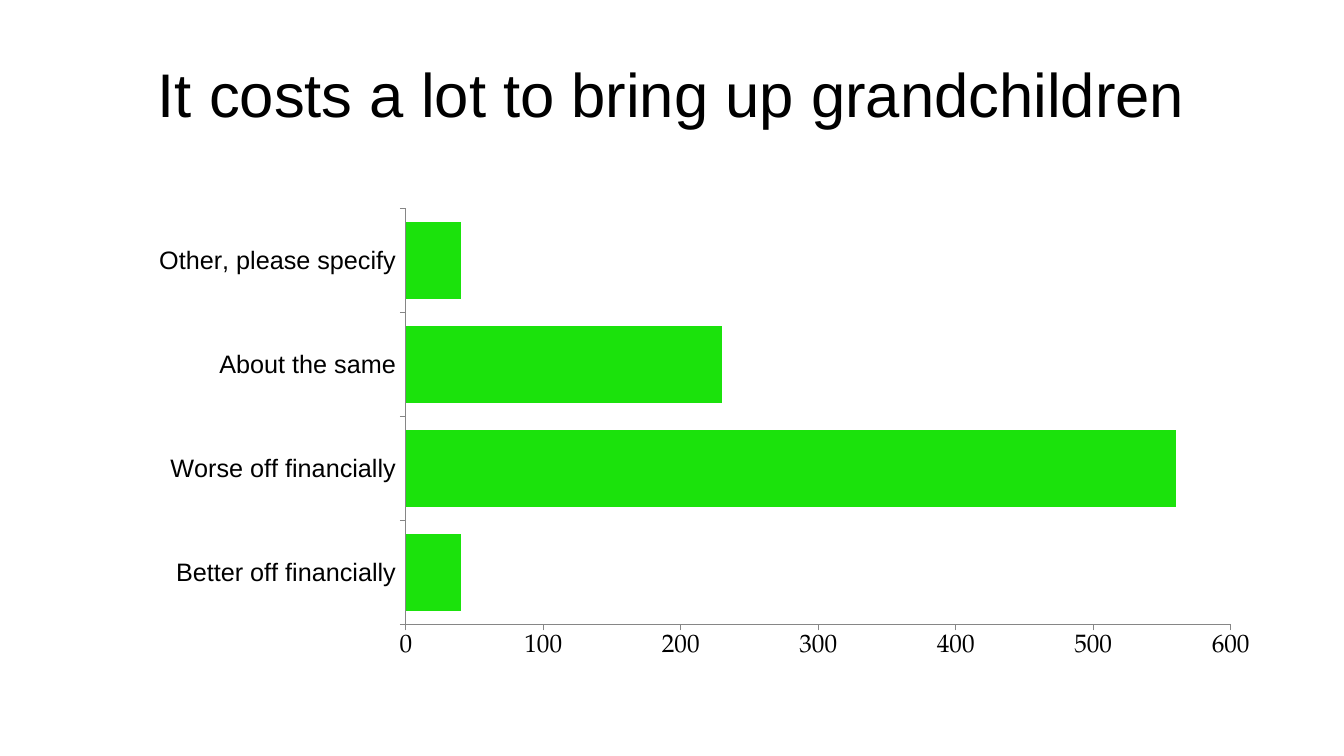
from lxml import etree
from pptx import Presentation
from pptx.chart.data import CategoryChartData
from pptx.dml.color import RGBColor
from pptx.enum.chart import XL_CHART_TYPE, XL_TICK_MARK
from pptx.enum.text import MSO_ANCHOR, PP_ALIGN
from pptx.util import Pt

BAR_CLUSTERED = XL_CHART_TYPE.BAR_CLUSTERED
TICK_OUTSIDE = XL_TICK_MARK.OUTSIDE
MIDDLE = MSO_ANCHOR.MIDDLE
CENTER = PP_ALIGN.CENTER

COLORS = {"text": "000000", "bar": "1BE20C", "axis": "868686"}
HEADING_FONT = "Arial"
NUMBER_FONT = "TeX Gyre Pagella"

FINANCES = {
    "Better off financially": 40,
    "Worse off financially": 560,
    "About the same": 230,
    "Other, please specify": 40,
}
PLOT_LAYOUT = {
    "layoutTarget": "inner", "xMode": "edge", "yMode": "edge",
    "x": 0.28, "y": 0.065, "w": 0.682, "h": 0.833,
}


def apply(target, settings):
    for attribute, value in settings.items():
        setattr(target, attribute, value)


class SlideBuilder:
    def __init__(self, slide):
        self.slide = slide

    def style_font(self, font, name, size):
        apply(font, {"name": name, "size": Pt(size), "bold": False})
        font.color.rgb = RGBColor.from_string(COLORS["text"])

    def title(self, text, left, top, width, height):
        box = self.slide.shapes.add_textbox(Pt(left), Pt(top), Pt(width), Pt(height))
        frame = box.text_frame
        apply(frame, {"word_wrap": True, "vertical_anchor": MIDDLE})
        heading = frame.paragraphs[0]
        apply(heading, {"text": text, "alignment": CENTER})
        self.style_font(heading.runs[0].font, HEADING_FONT, 44)

    def bar_chart(self, answers, left, top, width, height):
        data = CategoryChartData()
        data.categories = list(answers)
        data.add_series("Series 1", list(answers.values()))
        chart = self.slide.shapes.add_chart(
            BAR_CLUSTERED, Pt(left), Pt(top), Pt(width), Pt(height), data
        ).chart
        apply(chart, {"has_legend": False, "has_title": False})
        self.style_font(chart.font, NUMBER_FONT, 18)

        plot = chart.plots[0]
        apply(plot, {"gap_width": 35, "vary_by_categories": False})
        fill = plot.series[0].format.fill
        fill.solid()
        fill.fore_color.rgb = RGBColor.from_string(COLORS["bar"])

        self.style_axis(chart.category_axis, HEADING_FONT)
        self.style_axis(chart.value_axis, NUMBER_FONT)
        apply(chart.value_axis,
              {"minimum_scale": 0, "maximum_scale": 600, "major_unit": 100})
        self.place_plot(chart)

    def style_axis(self, axis, font_name):
        apply(axis, {"has_major_gridlines": False, "major_tick_mark": TICK_OUTSIDE})
        axis.format.line.width = Pt(0.75)
        axis.format.line.color.rgb = RGBColor.from_string(COLORS["axis"])
        self.style_font(axis.tick_labels.font, font_name, 18)

    def place_plot(self, chart):
        """Fix the inner plot area as fractions of the chart frame."""
        plot_area = chart.element.chart.plotArea
        namespace = etree.QName(plot_area).namespace
        for automatic in plot_area.findall(f"{{{namespace}}}layout"):
            plot_area.remove(automatic)
        layout = etree.Element(f"{{{namespace}}}layout")
        manual = etree.SubElement(layout, f"{{{namespace}}}manualLayout")
        for tag, value in PLOT_LAYOUT.items():
            etree.SubElement(manual, f"{{{namespace}}}{tag}", val=str(value))
        plot_area.insert(0, layout)


def main():
    presentation = Presentation()
    apply(presentation, {"slide_width": Pt(960), "slide_height": Pt(540)})
    blank = presentation.slide_layouts[6]
    builder = SlideBuilder(presentation.slides.add_slide(blank))
    builder.title("It costs a lot to bring up grandchildren", 48, 21.6, 864, 90)
    builder.bar_chart(FINANCES, 48, 126, 864, 356.4)
    presentation.save("out.pptx")


if __name__ == "__main__":
    main()
